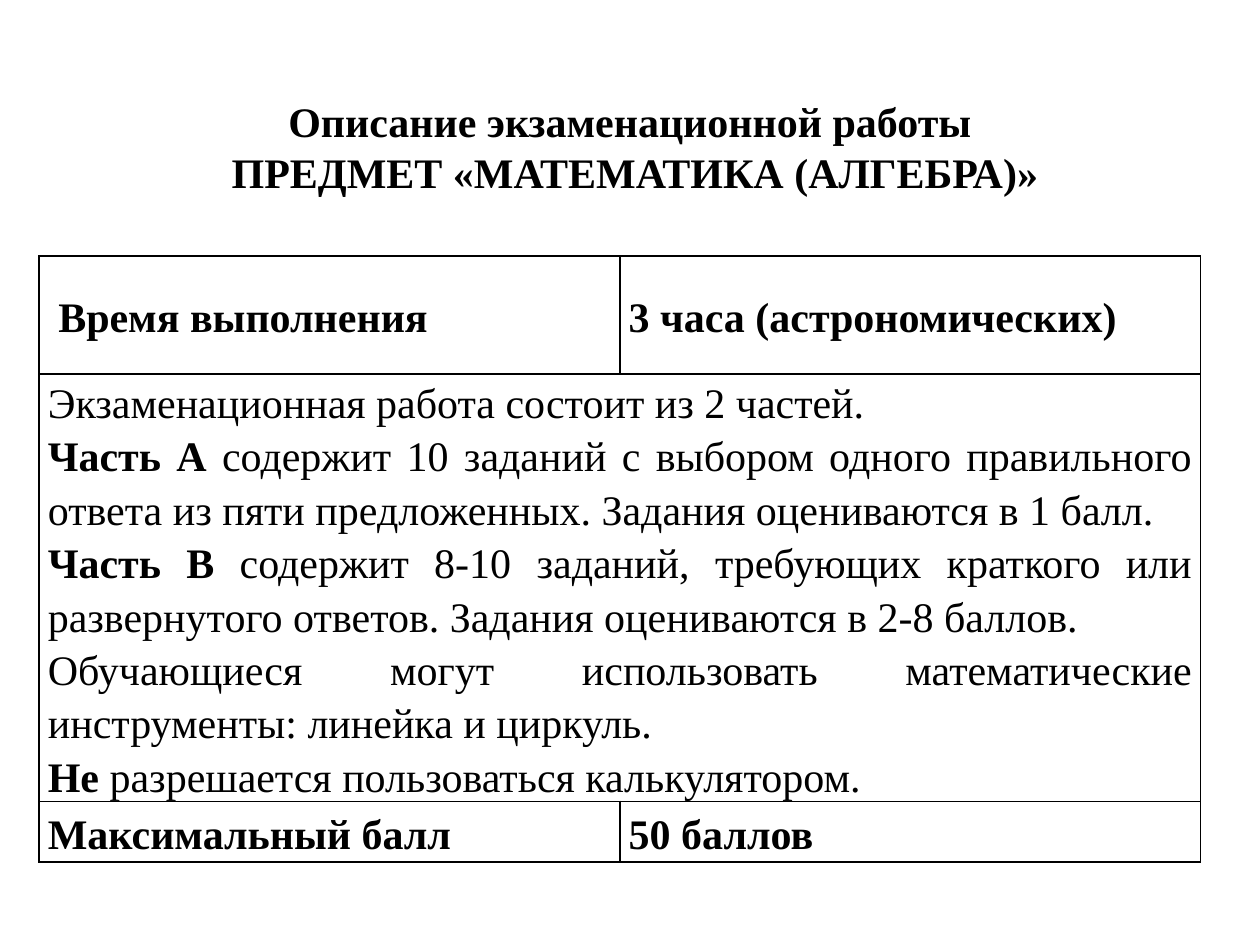
from lxml.etree import SubElement
from pptx import Presentation
from pptx.dml.color import RGBColor
from pptx.enum.text import MSO_ANCHOR as Anchor, MSO_AUTO_SIZE as AutoSize, PP_ALIGN as Align
from pptx.oxml.ns import qn
from pptx.util import Inches, Pt

COLORS = {"text": "000000", "border": "000000"}
TITLE = ["Описание экзаменационной работы ", "ПРЕДМЕТ «МАТЕМАТИКА (АЛГЕБРА)»"]

# Each paragraph is a list of (text, bold) runs
EXAM_TIME = [[[(" Время выполнения", True)]], [[("3 часа (астрономических)", True)]]]
EXAM_PARTS = [
    [("Экзаменационная работа состоит из 2 частей. ", False)],
    [("Часть А", True),
     (" содержит 10 заданий с выбором одного правильного ответа из пяти предложенных. "
      "Задания оцениваются в 1 балл.", False)],
    [("Часть В", True),
     (" содержит 8-10 заданий, требующих краткого или развернутого ответов. "
      "Задания оцениваются в 2-8 баллов.", False)],
    [("Обучающиеся могут использовать математические инструменты: линейка и циркуль.", False)],
    [("Не", True), (" разрешается пользоваться калькулятором.", False)],
]
MAX_SCORE = [[[("Максимальный балл", True)]], [[("50 баллов", True)]]]


class ExamSlide:
    """Holds the style and the current slide; lengths are shares of the slide's size."""
    font_name = "Times New Roman"
    font_size = Pt(24)
    line_spacing = 1.15
    cell_margin = Inches(0.07)

    def __init__(self, presentation):
        self.width = presentation.slide_width
        self.height = presentation.slide_height
        self.slide = presentation.slides.add_slide(presentation.slide_layouts[5])

    def box(self, left, top, width, height):
        return (int(left * self.width), int(top * self.height),
                int(width * self.width), int(height * self.height))

    def style_run(self, run, bold):
        font = run.font
        font.name, font.size, font.bold = self.font_name, self.font_size, bold
        font.color.rgb = RGBColor.from_string(COLORS["text"])

    def title(self, lines, *shares):
        shape = self.slide.shapes.title
        shape.left, shape.top, shape.width, shape.height = self.box(*shares)
        frame = shape.text_frame
        frame.text = "\n".join(lines)
        frame.word_wrap, frame.auto_size = True, AutoSize.NONE
        frame.vertical_anchor = Anchor.TOP
        frame.margin_top, frame.margin_bottom = Inches(0.18), 0
        for paragraph in frame.paragraphs:
            paragraph.alignment = Align.CENTER
            for run in paragraph.runs:
                self.style_run(run, True)

    def table(self, row_shares, columns, *shares):
        shape = self.slide.shapes.add_table(len(row_shares), columns, *self.box(*shares))
        table = shape.table
        table.first_row = table.horz_banding = False
        for row, share in zip(table.rows, row_shares):
            row.height = int(share * self.height)
        for cell in table.iter_cells():
            self.border(cell)
            cell.fill.background()
        return table

    def border(self, cell):
        properties = cell._tc.get_or_add_tcPr()
        for side in ("a:lnL", "a:lnR", "a:lnT", "a:lnB"):
            line = SubElement(properties, qn(side), w=str(Pt(1)))
            fill = SubElement(line, qn("a:solidFill"))
            SubElement(fill, qn("a:srgbClr"), val=COLORS["border"])

    def cell(self, cell, paragraphs, alignment=Align.LEFT, anchor=Anchor.MIDDLE):
        cell.margin_left = cell.margin_right = self.cell_margin
        cell.margin_top = cell.margin_bottom = 0
        cell.vertical_anchor = anchor
        frame = cell.text_frame
        for index, runs in enumerate(paragraphs):
            paragraph = frame.add_paragraph() if index else frame.paragraphs[0]
            paragraph.alignment, paragraph.line_spacing = alignment, self.line_spacing
            for text, bold in runs:
                run = paragraph.add_run()
                run.text = text
                self.style_run(run, bold)


def main():
    presentation = Presentation()
    presentation.slide_width, presentation.slide_height = Inches(10), Inches(7.5)
    exam = ExamSlide(presentation)

    # Heading
    exam.title(TITLE, 0.055, 0.58 / 7.5, 0.898, 1.38 / 7.5)

    # Exam table: time, description across both columns, score
    rows = [0.94 / 7.5, 3.39 / 7.5, 0.48 / 7.5]
    table = exam.table(rows, 2, 0.031, 2.03 / 7.5, 0.922, sum(rows))
    for row, contents in ((0, EXAM_TIME), (2, MAX_SCORE)):
        for column, paragraphs in enumerate(contents):
            exam.cell(table.cell(row, column), paragraphs)
    description = table.cell(1, 0)
    description.merge(table.cell(1, 1))
    exam.cell(description, EXAM_PARTS, Align.JUSTIFY, Anchor.TOP)

    presentation.save("out.pptx")


if __name__ == "__main__":
    main()
